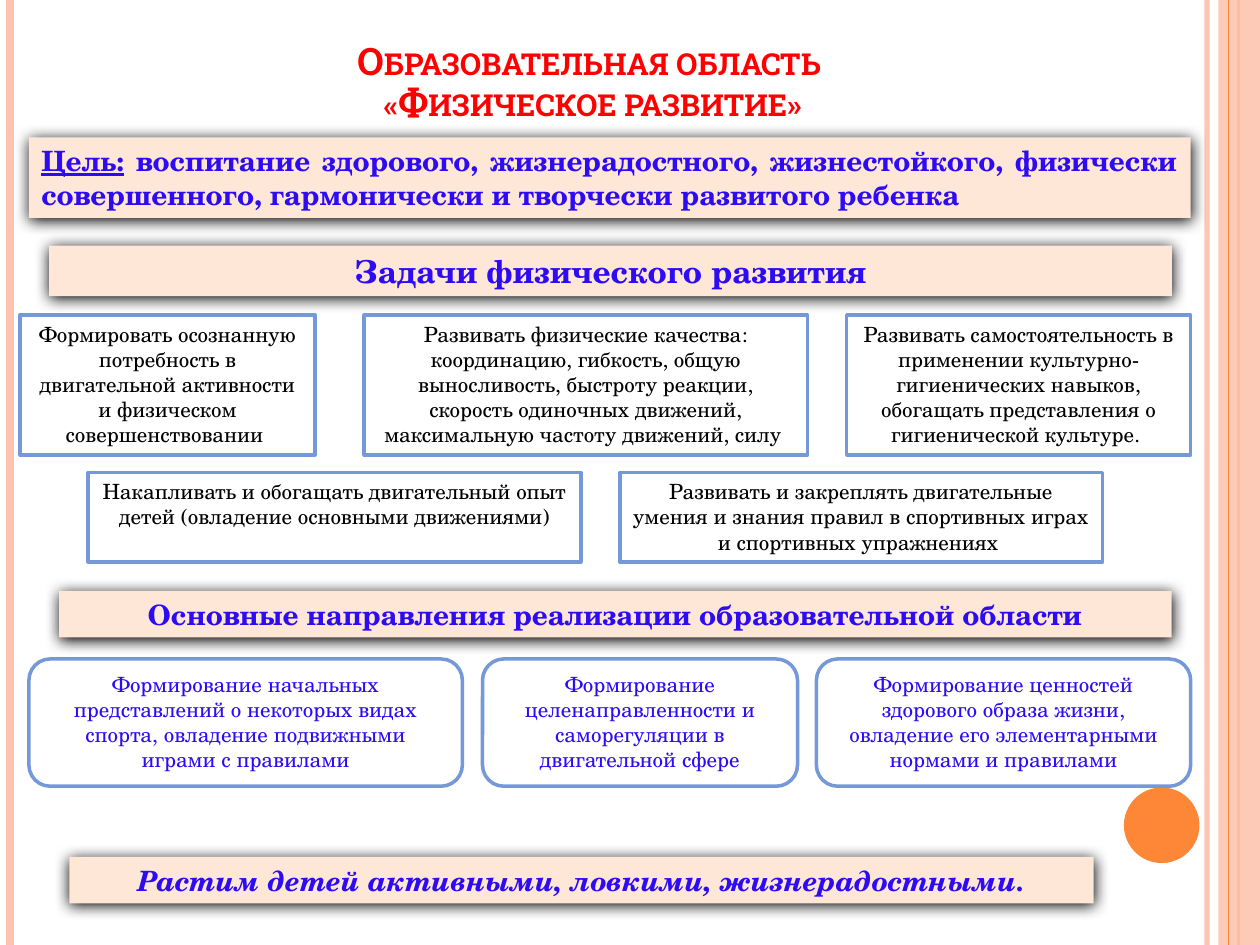
from lxml import etree
from pptx import Presentation
from pptx.dml.color import RGBColor
from pptx.enum.shapes import MSO_CONNECTOR, MSO_SHAPE
from pptx.enum.text import MSO_ANCHOR, MSO_AUTO_SIZE, PP_ALIGN
from pptx.oxml.ns import qn
from pptx.util import Inches, Pt

RECT, ROUND, OVAL = MSO_SHAPE.RECTANGLE, MSO_SHAPE.ROUNDED_RECTANGLE, MSO_SHAPE.OVAL
STRAIGHT = MSO_CONNECTOR.STRAIGHT
CENTER, JUSTIFY = PP_ALIGN.CENTER, PP_ALIGN.JUSTIFY
TOP, MIDDLE, BOTTOM = MSO_ANCHOR.TOP, MSO_ANCHOR.MIDDLE, MSO_ANCHOR.BOTTOM
GROW, FIXED = MSO_AUTO_SIZE.SHAPE_TO_FIT_TEXT, MSO_AUTO_SIZE.NONE

# The slide is a grid of 100 columns by 75 rows
COLS, ROWS = 100, 75
WIDTH, HEIGHT = Inches(10), Inches(7.5)
HEADING_FONT, BODY_FONT = "Roboto Slab", "TeX Gyre Schola"
RED, VIOLET, BLACK, WHITE = "FF0000", "2D0CF4", "000000", "FFFFFF"
CREAM, PEACH, ORANGE, BLUE = "FFE7D7", "FEC3AE", "FE8637", "7598D9"


def color(value):
    return RGBColor.from_string(value)


def grid(col, row, cols, rows):
    return (int(WIDTH * col / COLS), int(HEIGHT * row / ROWS),
            int(WIDTH * cols / COLS), int(HEIGHT * rows / ROWS))


def set_alpha(fill_parent, percent):
    tone = fill_parent.find(".//" + qn("a:srgbClr"))
    etree.SubElement(tone, qn("a:alpha"), val=str(percent * 1000))


def write(shape, *runs, size=12, font=BODY_FONT, tone=BLACK, align=CENTER,
          anchor=TOP, fit=GROW, spacing=None, bold=False, italic=False,
          underline_first=False, small_caps=False):
    """Fill one paragraph; a newline inside a run is a line break."""
    frame = shape.text_frame
    frame.word_wrap = True
    frame.auto_size = fit
    frame.vertical_anchor = anchor
    paragraph = frame.paragraphs[0]
    paragraph.alignment = align
    if spacing:
        paragraph.line_spacing = spacing
    for number, words in enumerate(runs):
        for line_number, line in enumerate(words.split("\n")):
            if line_number:
                paragraph.add_line_break()
            run = paragraph.add_run()
            run.text = line
            run.font.name, run.font.size = font, Pt(size)
            run.font.bold, run.font.italic = bold, italic
            run.font.underline = underline_first and number == 0
            run.font.color.rgb = color(tone)
            if small_caps:
                run.font._element.set("cap", "small")


def add_panel(slide, kind, box, fill, outline=None, alpha=None):
    panel = slide.shapes.add_shape(kind, *grid(*box))
    panel.shadow.inherit = False
    panel.fill.solid()
    panel.fill.fore_color.rgb = color(fill)
    if alpha:
        set_alpha(panel._element.spPr, alpha)
    if outline:
        panel.line.color.rgb = color(outline)
        panel.line.width = Pt(2)
    else:
        panel.line.fill.background()
    return panel


def add_stripe(slide, col, tone, weight, alpha=None):
    left, top, _, height = grid(col, 0, 0, ROWS)
    stripe = slide.shapes.add_connector(STRAIGHT, left, top, left, top + height)
    stripe.line.color.rgb = color(tone)
    stripe.line.width = Pt(weight)
    if alpha:
        set_alpha(stripe._element.spPr, alpha)
    etree.SubElement(stripe._element.spPr, qn("a:effectLst"))


def add_side_decor(slide):
    add_stripe(slide, 95.8, PEACH, 3, alpha=93)
    add_stripe(slide, 0.8, PEACH, 4.5)
    add_stripe(slide, 98.3, ORANGE, 1.5)
    add_panel(slide, RECT, (96.7, 0, 3.3, ROWS), PEACH, alpha=87)
    add_stripe(slide, 97.5, ORANGE, 0.75)
    add_panel(slide, OVAL, (89.2, 62.5, 6, 6), ORANGE)


def add_title(slide, box, words):
    title = slide.shapes.title
    title.left, title.top, title.width, title.height = grid(*box)
    write(title, words, size=21.6, font=HEADING_FONT, tone=RED, bold=True,
          anchor=BOTTOM, fit=FIXED, spacing=0.9, small_caps=True)


def add_banner(slide, box, *runs, **style):
    """Cream bar with a soft dark halo."""
    banner = add_panel(slide, RECT, box, CREAM)
    effects = banner._element.spPr.find(qn("a:effectLst"))
    halo = etree.SubElement(effects, qn("a:outerShdw"), blurRad=str(Pt(8.5)),
                            dist=str(Pt(1)), dir="5400000", rotWithShape="0")
    etree.SubElement(halo, qn("a:srgbClr"), val=BLACK)
    write(banner, *runs, **{"size": 16, "tone": VIOLET, "bold": True, **style})


def add_card_row(slide, box, cards, kind=RECT, tone=BLACK):
    """Cards are (offset, width, words), in columns from the row's left edge."""
    left, top, height = box
    for offset, width, words in cards:
        card = add_panel(slide, kind, (left + offset, top, width, height),
                         WHITE, outline=BLUE)
        write(card, words, tone=tone)


def main():
    deck = Presentation()
    deck.slide_width, deck.slide_height = WIDTH, HEIGHT
    slide = deck.slides.add_slide(deck.slide_layouts[5])
    add_side_decor(slide)

    # Title and goal
    add_title(slide, (7, 2.3, 80.1, 8.1),
              "Образовательная область \n«Физическое развитие»")
    add_banner(slide, (2.3, 10.9, 92.2, 6.4), "Цель:",
               " воспитание здорового, жизнерадостного, жизнестойкого, "
               "физически совершенного, гармонически и творчески развитого ребенка",
               align=JUSTIFY, underline_first=True)

    # Tasks
    add_banner(slide, (3.9, 19.5, 89.1, 4), "Задачи физического развития", size=18)
    add_card_row(slide, (1.6, 25, 11.1), [
        (0, 23.4, "Формировать осознанную потребность в двигательной "
                  "активности и физическом совершенствовании "),
        (27.3, 35.2, "Развивать физические качества: координацию, гибкость, "
                     "общую выносливость, быстроту реакции, скорость одиночных "
                     "движений, максимальную частоту движений, силу "),
        (65.6, 27.3, "Развивать самостоятельность в применении "
                     "культурно-гигиенических навыков, обогащать представления "
                     "о гигиенической культуре. "),
    ])
    add_card_row(slide, (7, 37.5, 7.1), [
        (0, 39.1, "Накапливать и обогащать двигательный опыт детей "
                  "(овладение основными движениями)"),
        (42.2, 38.3, "Развивать и закреплять двигательные умения и знания "
                     "правил в спортивных играх и спортивных упражнениях "),
    ])

    # Directions
    add_banner(slide, (4.7, 46.9, 88.3, 3.7),
               "Основные направления реализации образовательной области")
    add_card_row(slide, (2.3, 52.3, 10.1), [
        (0, 34.4, "Формирование начальных представлений о некоторых видах "
                  "спорта, овладение подвижными играми с правилами"),
        (36, 25, "Формирование целенаправленности и саморегуляции в "
                 "двигательной сфере"),
        (62.5, 29.7, "Формирование ценностей здорового образа жизни, "
                     "овладение его элементарными нормами и правилами"),
    ], kind=ROUND, tone=VIOLET)

    # Motto
    add_banner(slide, (5.5, 68, 81.3, 3.7),
               "Растим детей активными, ловкими, жизнерадостными.",
               italic=True, anchor=MIDDLE)
    deck.save("out.pptx")


if __name__ == "__main__":
    main()
